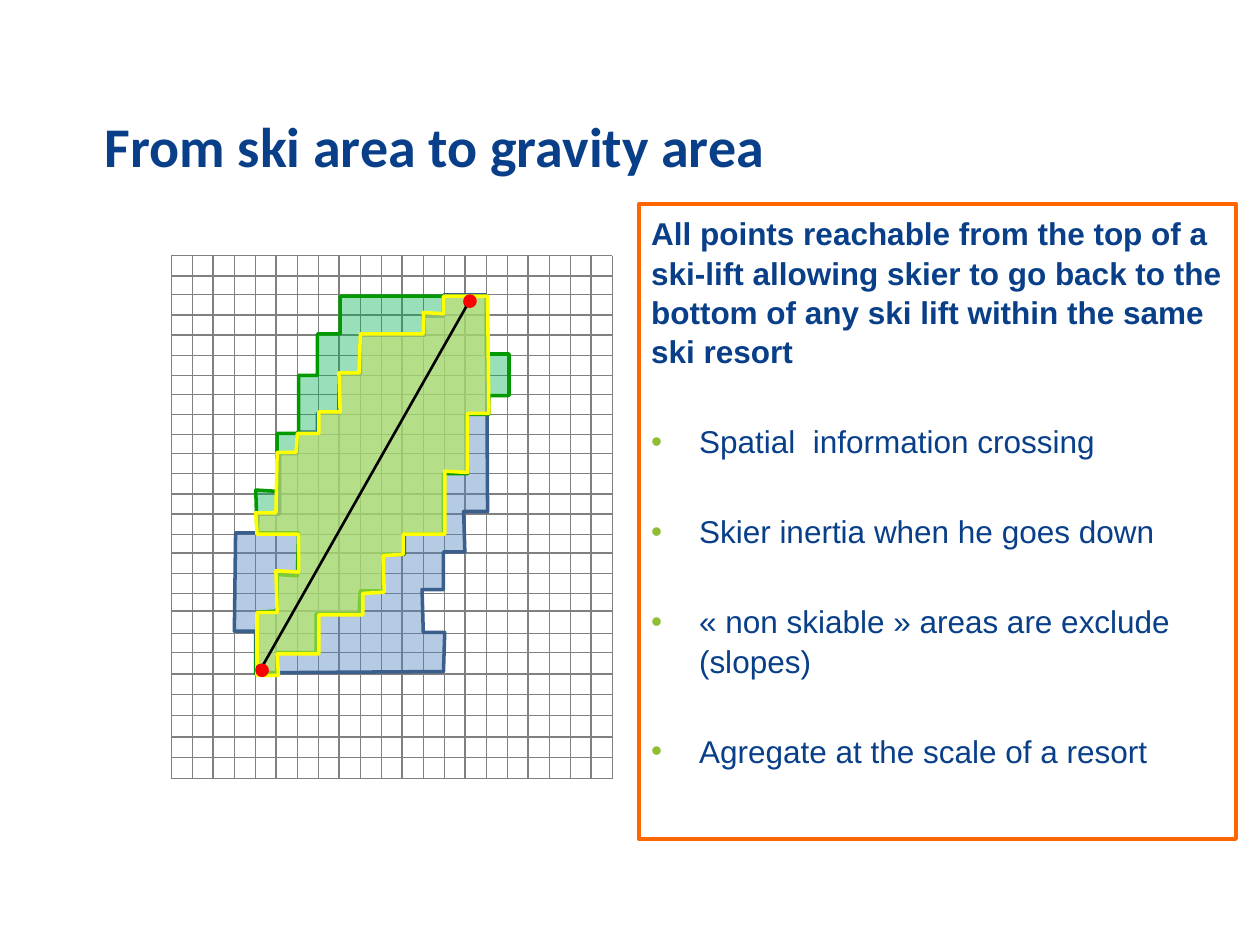
import pptx
import pptx.dml.color
import pptx.enum.shapes
import pptx.enum.text
import pptx.oxml.ns
import pptx.util
from lxml import etree

EMU_PER_PX = 9144  # 100 px to the inch
COLORS = {
    "white": "FFFFFF", "navy": "083F88", "grid": "808080", "black": "000000",
    "red": "FF0000", "orange": "FF6600", "bullet": "8FBD33",
    "blue": "4F81BD", "blue_edge": "3A5F8C",
    "green": "00B050", "green_edge": "009900",
    "yellow": "FFFF66", "yellow_edge": "FFFF00",
}

GRID_LEFT, GRID_RIGHT, GRID_TOP, GRID_BOTTOM = 136, 486, 203, 618
GRID_COLUMNS = 21
GRID_ROWS = [round(GRID_TOP + 15.75 * i) for i in range(18)] + [
    485, 503, 518, 535, 551, 568, 585, 601, GRID_BOTTOM]

UPHILL_AREA = [
    (386, 234), (352, 234), (352, 251), (336, 251), (337, 266), (286, 266),
    (286, 297), (269, 297), (269, 328), (252, 328), (252, 343), (236, 343),
    (236, 360), (222, 360), (222, 408), (205, 408), (204, 423), (187, 423),
    (186, 501), (203, 501), (203, 534), (352, 533), (353, 502), (336, 502),
    (335, 468), (352, 468), (352, 438), (369, 438), (368, 406), (387, 406)]
DOWNHILL_AREA = [
    (203, 535), (204, 486), (220, 485), (220, 456), (236, 457), (237, 423),
    (204, 423), (203, 389), (220, 390), (220, 344), (237, 344), (237, 298),
    (252, 298), (252, 265), (270, 265), (270, 235), (386, 235), (386, 281),
    (404, 281), (404, 314), (388, 314), (388, 329), (370, 329), (371, 376),
    (352, 376), (352, 424), (321, 424), (321, 440), (304, 440), (304, 469),
    (286, 469), (285, 487), (251, 487), (251, 518), (220, 518), (220, 534)]
GRAVITY_AREA = [
    (387, 235), (352, 235), (352, 249), (336, 248), (336, 265), (286, 265),
    (285, 296), (269, 296), (270, 327), (253, 327), (253, 344), (236, 344),
    (235, 359), (220, 359), (219, 407), (203, 407), (204, 424), (237, 424),
    (237, 454), (219, 453), (220, 486), (204, 486), (204, 536), (221, 536),
    (220, 519), (253, 519), (253, 488), (288, 488), (288, 471), (305, 470),
    (304, 441), (320, 440), (320, 424), (353, 424), (353, 374), (371, 375),
    (371, 328), (388, 328)]
LIFT_BOTTOM, LIFT_TOP = (207, 531), (372, 240)

DEFINITION = ("All points reachable from the top of a ski-lift allowing skier to go "
              "back to the bottom of any ski lift within the same ski resort")
STEPS = [
    "Spatial  information crossing",
    "Skier inertia when he goes down",
    "« non skiable » areas are exclude (slopes)",
    "Agregate at the scale of a resort",
]


def px(n):
    return pptx.util.Emu(round(n * EMU_PER_PX))


def rgb(name):
    return pptx.dml.color.RGBColor.from_string(COLORS[name])


def add_xml(parent, tag, **attrs):
    return etree.SubElement(parent, pptx.oxml.ns.qn(tag), attrs)


class SlideBuilder:
    def __init__(self, slide):
        self.slide = slide

    def format_text(self, p, size, font, bold=False):
        p.alignment = pptx.enum.text.PP_ALIGN.LEFT
        for r in p.runs:
            r.font.size = pptx.util.Pt(size)
            r.font.name = font
            r.font.bold = bold
            r.font.color.rgb = rgb("navy")

    def paint(self, sp, fill, line, alpha=None):
        """Set fill and 2 pt outline; alpha is the opacity in percent."""
        sp.shadow.inherit = False
        if fill:
            sp.fill.solid()
            sp.fill.fore_color.rgb = rgb(fill)
            if alpha:
                color = sp.fill._xPr.find(".//" + pptx.oxml.ns.qn("a:srgbClr"))
                add_xml(color, "a:alpha", val=str(alpha * 1000))
        else:
            sp.fill.background()
        sp.line.color.rgb = rgb(line)
        sp.line.width = pptx.util.Pt(2)

    def title(self, text, x, y, w, h):
        sp = self.slide.shapes.title
        sp.left, sp.top, sp.width, sp.height = map(px, (x, y, w, h))
        sp.fill.solid()
        sp.fill.fore_color.rgb = rgb("white")
        tf = sp.text_frame
        tf.text = text
        tf.auto_size = pptx.enum.text.MSO_AUTO_SIZE.NONE
        tf.vertical_anchor = pptx.enum.text.MSO_ANCHOR.MIDDLE
        self.format_text(tf.paragraphs[0], 32, "Calibri", bold=True)

    def line(self, start, end, color, width, shapes=None, oval_ends=False):
        shapes = shapes or self.slide.shapes
        cx = shapes.add_connector(pptx.enum.shapes.MSO_CONNECTOR.STRAIGHT,
                                  *map(px, start + end))
        cx.line.color.rgb = rgb(color)
        cx.line.width = pptx.util.Pt(width)
        if oval_ends:
            ln = cx.line._get_or_add_ln()
            add_xml(ln, "a:headEnd", type="oval")
            add_xml(ln, "a:tailEnd", type="oval")
        add_xml(cx._element.spPr, "a:effectLst")

    def grid(self):
        shapes = self.slide.shapes.add_group_shape().shapes
        step = (GRID_RIGHT - GRID_LEFT) / GRID_COLUMNS
        for i in range(GRID_COLUMNS + 1):
            x = round(GRID_LEFT + i * step)
            self.line((x, GRID_BOTTOM), (x, GRID_TOP), "grid", 0.75, shapes)
        for y in GRID_ROWS:
            self.line((GRID_LEFT, y), (GRID_RIGHT, y), "grid", 0.75, shapes)

    def area(self, points, color, alpha):
        fb = self.slide.shapes.build_freeform(*points[0], scale=EMU_PER_PX)
        fb.add_line_segments(points[1:], close=True)
        self.paint(fb.convert_to_shape(), color, color + "_edge", alpha)

    def dot(self, center, size=8):
        x, y = (c - size // 2 for c in center)
        sp = self.slide.shapes.add_shape(pptx.enum.shapes.MSO_SHAPE.OVAL,
                                         *map(px, (x, y, size, size)))
        self.paint(sp, "red", "red")

    def bullet(self, p, indent=38):
        pPr = p._p.get_or_add_pPr()
        pPr.set("marL", str(px(indent)))
        pPr.set("indent", str(px(-indent)))
        add_xml(add_xml(pPr, "a:buClr"), "a:srgbClr", val=COLORS["bullet"])
        add_xml(pPr, "a:buFont", typeface="Arial")
        add_xml(pPr, "a:buChar", char="•")

    def text_panel(self, heading, items, x, y, w, h):
        sp = self.slide.shapes.add_shape(pptx.enum.shapes.MSO_SHAPE.RECTANGLE,
                                         *map(px, (x, y, w, h)))
        self.paint(sp, None, "orange")
        tf = sp.text_frame
        tf.word_wrap = True
        tf.vertical_anchor = pptx.enum.text.MSO_ANCHOR.TOP
        tf.margin_top = px(7)
        for i, text in enumerate([heading] + items):
            p = tf.add_paragraph() if i else tf.paragraphs[0]
            p.text = text
            if i:
                self.bullet(p)
                p.space_before = pptx.util.Pt(29)
            p.line_spacing = 1.04
            self.format_text(p, 18, "Arial", bold=i == 0)


def main():
    prs = pptx.Presentation()
    prs.slide_width, prs.slide_height = px(1000), px(750)
    s = SlideBuilder(prs.slides.add_slide(prs.slide_layouts[5]))
    s.title("From ski area to gravity area", 73, 71, 840, 88)
    s.grid()
    s.area(UPHILL_AREA, "blue", 42)
    s.area(DOWNHILL_AREA, "green", 40)
    s.area(GRAVITY_AREA, "yellow", 49)
    s.line(LIFT_BOTTOM, LIFT_TOP, "black", 1.5, oval_ends=True)
    s.dot((373, 239))
    s.dot((208, 532))
    s.text_panel(DEFINITION, STEPS, 507, 162, 474, 504)
    prs.save("out.pptx")


if __name__ == "__main__":
    main()
